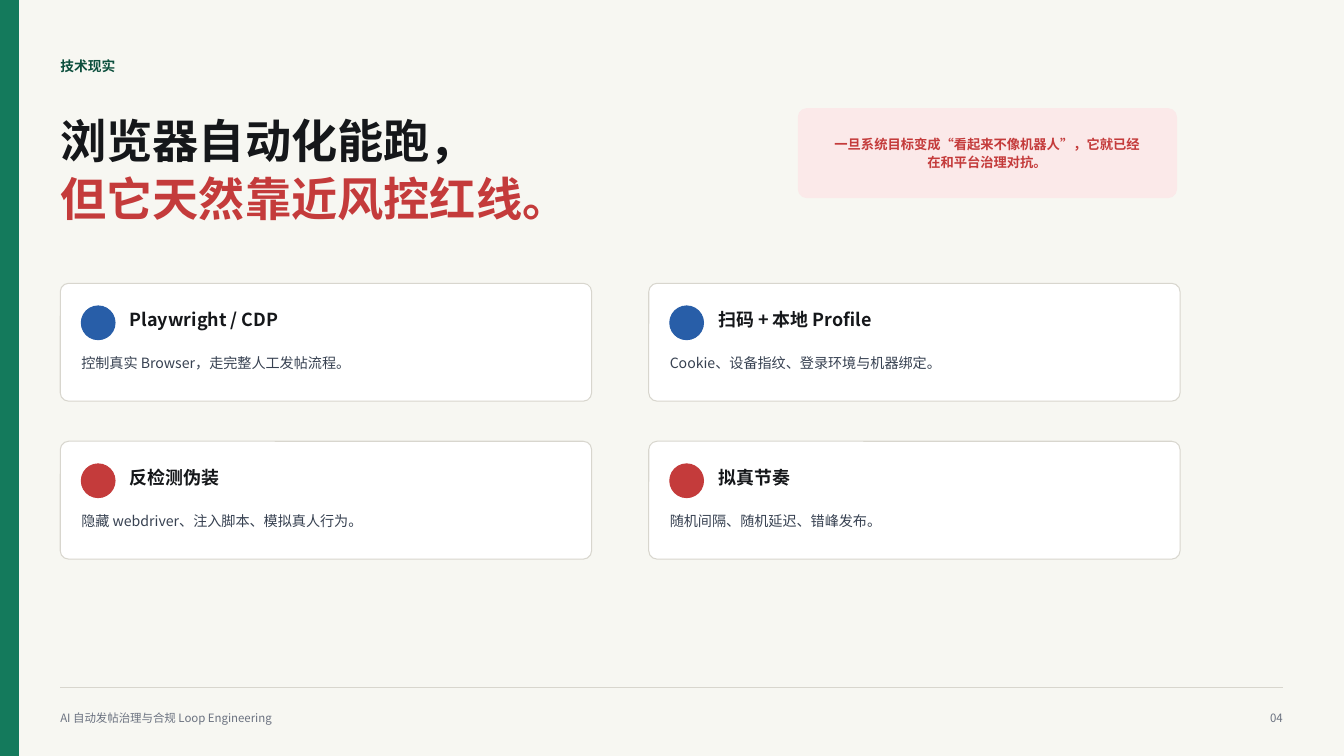
from lxml import etree
from pptx import Presentation
from pptx import util as u
from pptx.dml import color
from pptx.enum import shapes, text
from pptx.oxml import ns

FACE = "Noto Sans CJK SC"
INK, GRAY, RED, BLUE = "15171A", "6B7280", "C43B3B", "285EA8"
RULE, GREEN = "D8D6CE", "147A5C"
LEFT = text.PP_ALIGN.LEFT
KIND = shapes.MSO_SHAPE


def rgb(code):
    return color.RGBColor.from_string(code)


def span(*sizes):
    return [u.Cm(size) for size in sizes]


def style(para, size, code, bold=False, align=LEFT, lead=1.12):
    para.alignment = align
    para.line_spacing = lead
    font = para.font
    font.size, font.bold, font.name = u.Pt(size), bold, FACE
    font.color.rgb = rgb(code)
    props = para._p.pPr.find(ns.qn("a:defRPr"))
    etree.SubElement(props, ns.qn("a:ea"), typeface=FACE)


def clear(frame):
    frame.margin_left = frame.margin_right = 0
    frame.margin_top = frame.margin_bottom = 0
    frame.word_wrap = True
    frame.auto_size = text.MSO_AUTO_SIZE.NONE
    frame.vertical_anchor = text.MSO_ANCHOR.TOP


def write(slide, box, words, *look, **more):
    frame = slide.shapes.add_textbox(*span(*box)).text_frame
    clear(frame)
    para = frame.paragraphs[0]
    para.text = words
    style(para, *look, **more)


def draw(slide, kind, box, fill, edge=None, bend=None):
    form = slide.shapes.add_shape(kind, *span(*box))
    form.shadow.inherit = False
    form.fill.solid()
    form.fill.fore_color.rgb = rgb(fill)
    form.line.color.rgb = rgb(edge or fill)
    form.line.width = u.Pt(0.75)
    if bend:
        form.adjustments[0] = bend


def head(slide, x, y, w):
    write(slide, (x, y, w, 0.64), "技术现实", 9.8, "0C4F3D", True)
    title = slide.shapes.title
    title.left, title.top, title.width, title.height = span(x, y + 1.32, w, 3)
    frame = title.text_frame
    clear(frame)
    frame.text = "浏览器自动化能跑，\n但它天然靠近风控红线。"
    for para, code in zip(frame.paragraphs, (INK, RED)):
        para.space_before = u.Pt(0)
        style(para, 33, code, True, lead=u.Pt(41.8))


def note(slide, x, y, w, h):
    draw(slide, KIND.ROUNDED_RECTANGLE, (x, y, w, h), "FBE9E9", bend=0.095)
    write(slide, (x + 0.79, y + 0.64, w - 1.6, 0.89),
          "一旦系统目标变成“看起来不像机器人”，它就已经在和平台治理对抗。",
          9.5, RED, True, text.PP_ALIGN.CENTER)


def card(slide, x, y, w, h, name, body, code):
    draw(slide, KIND.ROUNDED_RECTANGLE, (x, y, w, h), "FFFFFF", RULE, 0.071)
    draw(slide, KIND.OVAL, (x + 0.53, y + 0.57, 0.85, 0.85), code)
    write(slide, (x + 1.75, y + 0.57, w - 2.34, 0.61), name, 12.8, INK, True)
    write(slide, (x + 0.53, y + 1.74, w - 1.07, 0.97), body, 10.1, "374151",
          lead=1.13)


def grid(slide, x, y, w, h):
    cards = [
        ("Playwright / CDP", "控制真实 Browser，走完整人工发帖流程。", BLUE),
        ("扫码 + 本地 Profile", "Cookie、设备指纹、登录环境与机器绑定。", BLUE),
        ("反检测伪装", "隐藏 webdriver、注入脚本、模拟真人行为。", RED),
        ("拟真节奏", "随机间隔、随机延迟、错峰发布。", RED),
    ]
    wide, high = 13.39, 2.97
    for i, item in enumerate(cards):
        row, col = divmod(i, 2)
        card(slide, x + col * (w - wide), y + row * (h - high), wide, high,
             *item)


def foot(slide, x, y, w):
    line = slide.shapes.add_connector(shapes.MSO_CONNECTOR.STRAIGHT,
                                      *span(x, y, x + w, y))
    line.line.color.rgb = rgb(RULE)
    line.line.width = u.Pt(0.75)
    etree.SubElement(line._element.spPr, ns.qn("a:effectLst"))
    write(slide, (x, y + 0.56, 16.94, 0.64),
          "AI 自动发帖治理与合规 Loop Engineering", 8.2, GRAY)
    write(slide, (x + w - 1.27, y + 0.56, 1.27, 0.64), "04", 8.2, GRAY,
          align=text.PP_ALIGN.RIGHT)


def main():
    deck = Presentation()
    deck.slide_width, deck.slide_height = span(33.87, 19.05)
    slide = deck.slides.add_slide(deck.slide_layouts[5])
    slide.background.fill.solid()
    slide.background.fill.fore_color.rgb = rgb("F7F7F2")
    draw(slide, KIND.RECTANGLE, (0, 0, 0.48, 19.05), GREEN)
    foot(slide, 1.52, 17.32, 30.81)
    head(slide, 1.52, 1.42, 18)
    grid(slide, 1.52, 7.14, 28.22, 6.95)
    note(slide, 20.12, 2.74, 9.53, 2.24)
    deck.save("out.pptx")


if __name__ == "__main__":
    main()
